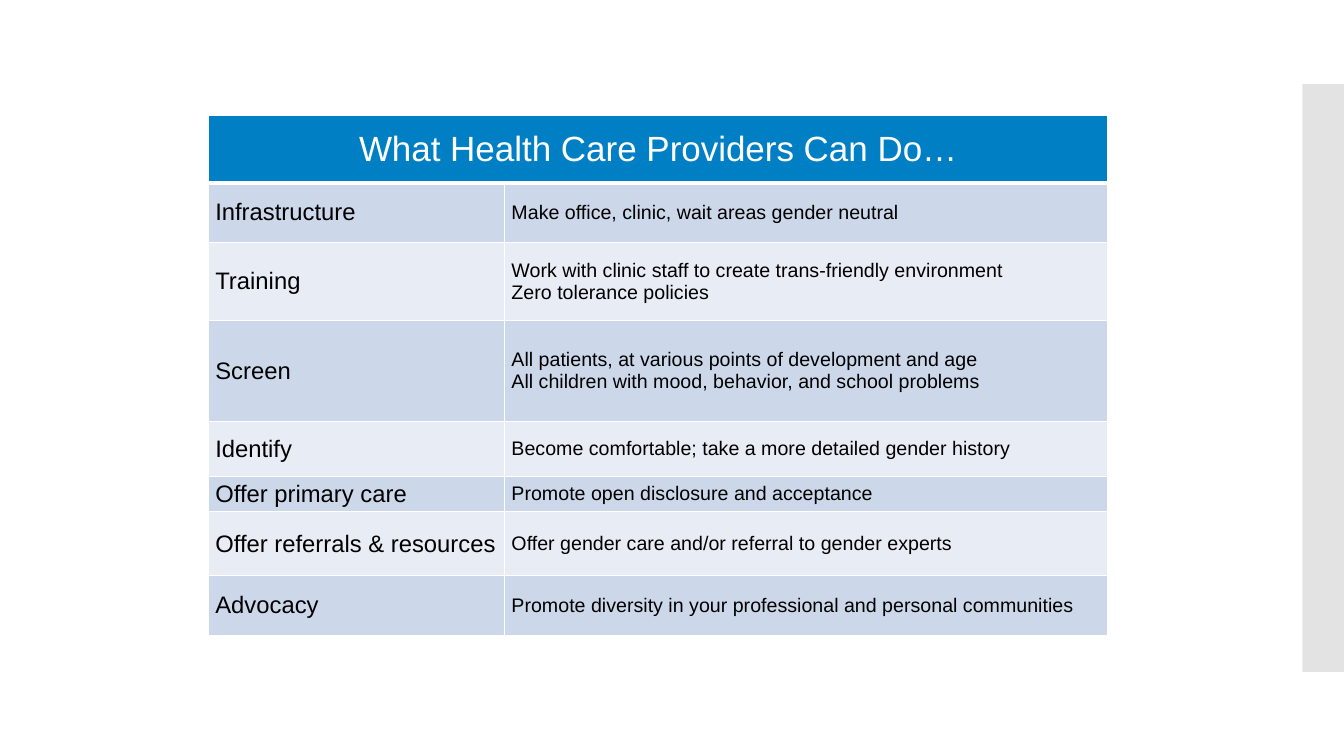
from dataclasses import dataclass

from lxml import etree
from pptx import Presentation
from pptx.dml.color import RGBColor
from pptx.enum.shapes import MSO_SHAPE
from pptx.enum.text import MSO_ANCHOR, PP_ALIGN
from pptx.oxml.ns import qn
from pptx.util import Pt

RECTANGLE = MSO_SHAPE.RECTANGLE
MIDDLE = MSO_ANCHOR.MIDDLE
LEFT, CENTER = PP_ALIGN.LEFT, PP_ALIGN.CENTER
BLANK_LAYOUT = 6


@dataclass(frozen=True)
class Theme:
    font: str = "Arial"
    header_fill: str = "007FC4"
    bands: tuple = ("CCD8EA", "E7ECF5")
    panel: str = "C8C8C8"
    white: str = "FFFFFF"
    black: str = "000000"
    header_size: int = 25
    topic_size: int = 17
    action_size: int = 14


THEME = Theme()

HEADER = "What Health Care Providers Can Do…"
HEADER_HEIGHT = 48.2
COLUMN_WIDTHS = (211.6, 430.6)
# topic, actions, row height
ROWS = (
    ("Infrastructure", "Make office, clinic, wait areas gender neutral", 42.5),
    ("Training", "Work with clinic staff to create trans-friendly environment\n"
                 "Zero tolerance policies", 55.6),
    ("Screen", "All patients, at various points of development and age\n"
               "All children with mood, behavior, and school problems", 72.6),
    ("Identify", "Become comfortable; take a more detailed gender history", 39),
    ("Offer primary care", "Promote open disclosure and acceptance", 25.4),
    ("Offer referrals & resources",
     "Offer gender care and/or referral to gender experts", 45.6),
    ("Advocacy",
     "Promote diversity in your professional and personal communities", 42.8),
)


def rgb(color):
    return RGBColor.from_string(color)


def set_borders(cell, color, bottom=1):
    """Draw 1 pt lines round a cell, with its own width at the bottom."""
    tcPr = cell._tc.get_or_add_tcPr()
    widths = {"a:lnL": 1, "a:lnR": 1, "a:lnT": 1, "a:lnB": bottom}
    for i, (tag, width) in enumerate(widths.items()):
        ln = etree.Element(qn(tag), w=str(Pt(width)))
        fill = etree.SubElement(ln, qn("a:solidFill"))
        etree.SubElement(fill, qn("a:srgbClr"), val=color)
        tcPr.insert(i, ln)


def fill_cell(cell, text, fill, size, color, align=LEFT, bottom=1):
    cell.fill.solid()
    cell.fill.fore_color.rgb = rgb(fill)
    set_borders(cell, THEME.white, bottom)
    cell.vertical_anchor = MIDDLE
    cell.margin_left = cell.margin_right = Pt(4.8)
    cell.margin_top = cell.margin_bottom = Pt(2.4)
    tf = cell.text_frame
    tf.text = text
    for p in tf.paragraphs:
        p.alignment = align
        for r in p.runs:
            r.font.name = THEME.font
            r.font.size = Pt(size)
            r.font.bold = False
            r.font.color.rgb = rgb(color)


def add_side_panel(s):
    panel = s.shapes.add_shape(RECTANGLE, Pt(930.4), Pt(60), Pt(29.6), Pt(420))
    panel.shadow.inherit = False
    panel.line.fill.background()
    panel.fill.solid()
    panel.fill.fore_color.rgb = rgb(THEME.panel)
    color = panel._element.spPr.find(".//" + qn("a:srgbClr"))
    etree.SubElement(color, qn("a:alpha"), val="50000")


def add_provider_table(s):
    heights = [HEADER_HEIGHT] + [height for _, _, height in ROWS]
    table = s.shapes.add_table(
        len(heights), len(COLUMN_WIDTHS), Pt(149), Pt(82.4),
        Pt(sum(COLUMN_WIDTHS)), Pt(sum(heights))).table
    for column, width in zip(table.columns, COLUMN_WIDTHS):
        column.width = Pt(width)
    for row, height in zip(table.rows, heights):
        row.height = Pt(height)

    header = table.cell(0, 0)
    header.merge(table.cell(0, 1))
    fill_cell(header, HEADER, THEME.header_fill, THEME.header_size,
              THEME.white, CENTER, bottom=3)
    for i, (topic, actions, _) in enumerate(ROWS):
        band = THEME.bands[i % 2]
        fill_cell(table.cell(i + 1, 0), topic, band, THEME.topic_size, THEME.black)
        fill_cell(table.cell(i + 1, 1), actions, band, THEME.action_size, THEME.black)


def main():
    prs = Presentation()
    prs.slide_width, prs.slide_height = Pt(960), Pt(540)
    s = prs.slides.add_slide(prs.slide_layouts[BLANK_LAYOUT])
    add_side_panel(s)
    add_provider_table(s)
    prs.save("out.pptx")


if __name__ == "__main__":
    main()
